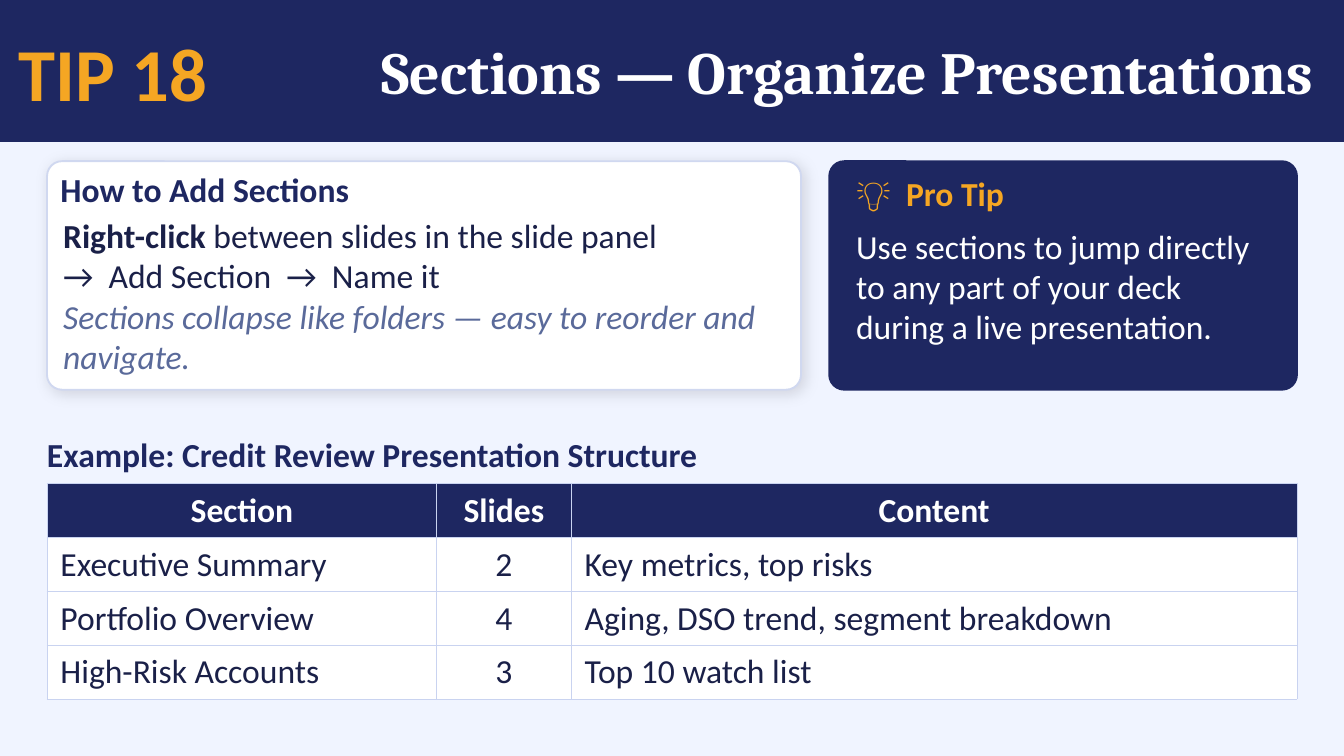
"""Build the "Tip 18: Sections" slide with two cards and an example table."""
from lxml import etree
from pptx import Presentation
from pptx.dml.color import RGBColor
from pptx.enum.shapes import MSO_SHAPE
from pptx.enum.text import MSO_ANCHOR, PP_ALIGN
from pptx.oxml import parse_xml
from pptx.util import Pt

PX = 4572
LEFT, CENTER, RIGHT = PP_ALIGN.LEFT, PP_ALIGN.CENTER, PP_ALIGN.RIGHT
MIDDLE = MSO_ANCHOR.MIDDLE
RECT, ROUNDED = MSO_SHAPE.RECTANGLE, MSO_SHAPE.ROUNDED_RECTANGLE
NAVY, INK, SLATE, AMBER, WHITE = "1E2761", "1A2048", "5A6A9A", "F5A623", "FFFFFF"
PALE, CARD_EDGE, GRID = "F0F4FF", "D0D8F0", "C9D3F0"
DRAWING = "http://schemas.openxmlformats.org/drawingml/2006/main"

BODY = {"name": "Calibri", "size": Pt(18), "bold": False}
STRONG = {**BODY, "bold": True}
ASIDE = {**BODY, "italic": True}
TITLE = {"name": "Cambria", "size": Pt(32), "bold": True}
TIP_NUMBER = {**STRONG, "size": Pt(40)}


def color(hex_value):
    return RGBColor.from_string(hex_value)


def write(frame, paragraphs, align):
    for index, runs in enumerate(paragraphs):
        paragraph = frame.add_paragraph() if index else frame.paragraphs[0]
        paragraph.alignment = align
        for words, ink, style in runs:
            run = paragraph.add_run()
            run.text = words
            run.font.color.rgb = color(ink)
            for key, value in style.items():
                setattr(run.font, key, value)


deck = Presentation()
deck.slide_width, deck.slide_height = 2000 * PX, 1125 * PX
slide = deck.slides.add_slide(deck.slide_layouts[6])
slide.background.fill.solid()
slide.background.fill.fore_color.rgb = color(PALE)

panels = [
    (RECT, (0, 0, 2000, 210), NAVY, NAVY),
    (ROUNDED, (70, 240, 1122, 340), WHITE, CARD_EDGE),
    (ROUNDED, (1234, 240, 696, 340), NAVY, NAVY),
]
for outline, box, fill, edge in panels:
    panel = slide.shapes.add_shape(outline, *(n * PX for n in box))
    panel.shadow.inherit = False
    panel.fill.solid()
    panel.fill.fore_color.rgb = color(fill)
    panel.line.color.rgb = color(edge)
    panel.line.width = Pt(1)
    if outline == ROUNDED:
        panel.adjustments[0] = 0.065
    if fill == WHITE:
        effects = panel.element.spPr.find(f"{{{DRAWING}}}effectLst")
        effects.append(parse_xml(
            f'<a:outerShdw xmlns:a="{DRAWING}" blurRad="{Pt(8)}" dist="{Pt(2)}" '
            'dir="2700000" algn="bl" rotWithShape="0"><a:srgbClr val="000000">'
            '<a:alpha val="13000"/></a:srgbClr></a:outerShdw>'))

steps = [
    [("Right-click", INK, STRONG), (" between slides in the slide panel", INK, BODY)],
    [("→  Add Section  →  Name it", INK, BODY)],
    [("Sections collapse like folders — easy to reorder and navigate.", SLATE, ASIDE)],
]
advice = "Use sections to jump directly to any part of your deck during a live presentation."
example = "Example: Credit Review Presentation Structure"
texts = [
    ((462, 60, 1494, 90), RIGHT, [[("Sections — Organize Presentations", WHITE, TITLE)]]),
    ((18, 68, 300, 76), CENTER, [[("TIP 18", AMBER, TIP_NUMBER)]]),
    ((90, 246, 700, 70), LEFT, [[("How to Add Sections", NAVY, STRONG)]]),
    ((94, 310, 1080, 260), LEFT, steps),
    ((1274, 256, 430, 64), LEFT, [[("💡  Pro Tip", AMBER, STRONG)]]),
    ((1274, 326, 596, 200), LEFT, [[(advice, WHITE, BODY)]]),
    ((70, 640, 1860, 70), LEFT, [[(example, NAVY, STRONG)]]),
]
for box, align, paragraphs in texts:
    frame = slide.shapes.add_textbox(*(n * PX for n in box)).text_frame
    layout = {"word_wrap": True, "vertical_anchor": MIDDLE, "margin_left": 0,
              "margin_top": 0, "margin_right": 0, "margin_bottom": 0}
    for key, value in layout.items():
        setattr(frame, key, value)
    write(frame, paragraphs, align)

sections = [
    ("Section", "Slides", "Content"),
    ("Executive Summary", "2", "Key metrics, top risks"),
    ("Portfolio Overview", "4", "Aging, DSO trend, segment breakdown"),
    ("High-Risk Accounts", "3", "Top 10 watch list"),
]
widths = (580, 200, 1080)
structure = slide.shapes.add_table(
    len(sections), len(widths), 70 * PX, 720 * PX, sum(widths) * PX, 272 * PX).table
for column, width in zip(structure.columns, widths):
    column.width = width * PX
for row, values in enumerate(sections):
    fill, ink, style = (BODY and WHITE, INK, BODY) if row else (NAVY, WHITE, STRONG)
    for col, value in enumerate(values):
        cell = structure.cell(row, col)
        properties = cell._tc.get_or_add_tcPr()
        for side in ("lnL", "lnR", "lnT", "lnB"):
            border = etree.SubElement(properties, f"{{{DRAWING}}}{side}", w=str(Pt(0.5)))
            paint = etree.SubElement(border, f"{{{DRAWING}}}solidFill")
            etree.SubElement(paint, f"{{{DRAWING}}}srgbClr", val=GRID)
        cell.fill.solid()
        cell.fill.fore_color.rgb = color(fill)
        align = CENTER if row == 0 or col == 1 else LEFT
        write(cell.text_frame, [[(value, ink, style)]], align)

deck.save("out.pptx")
